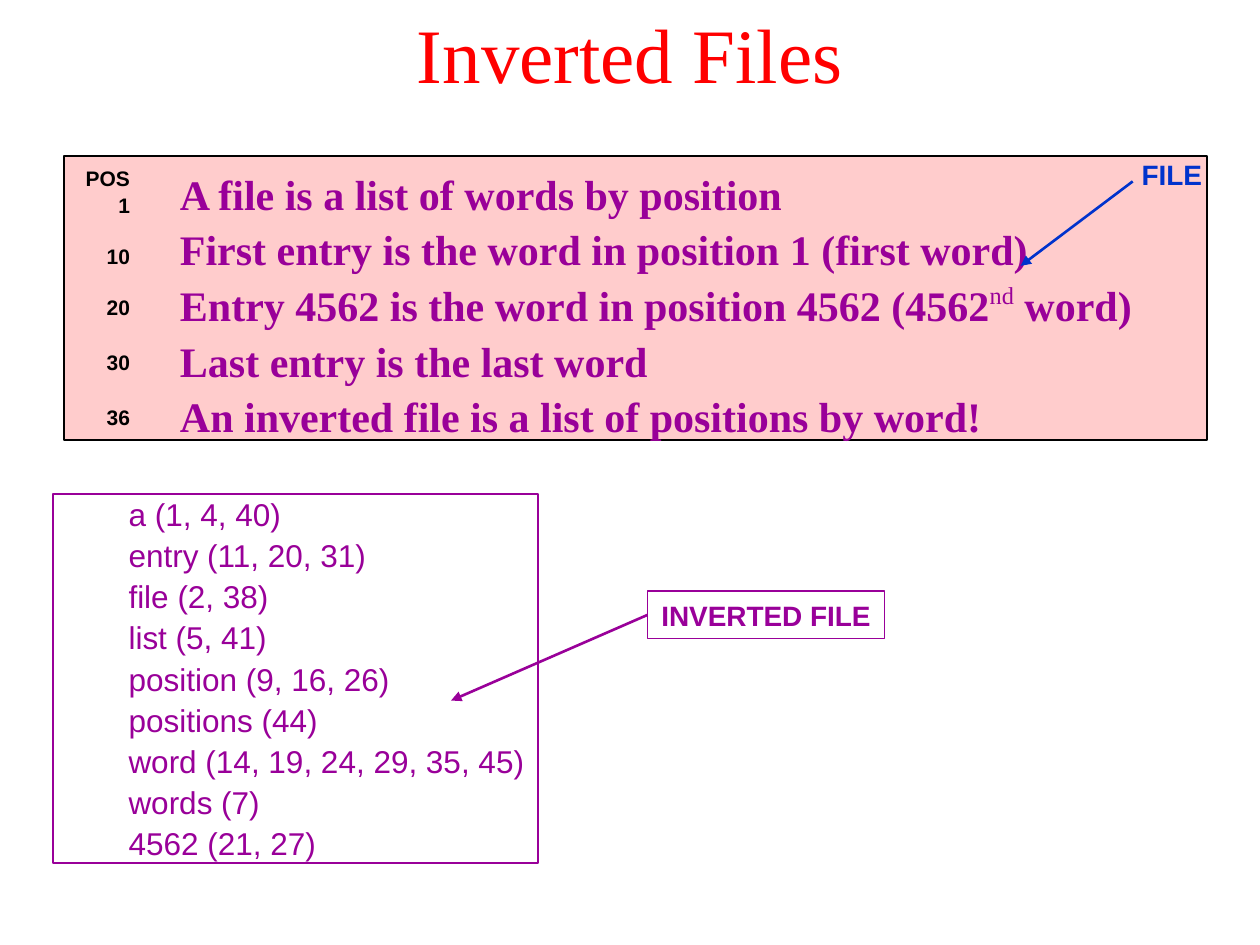
from dataclasses import dataclass

from lxml.etree import SubElement
from pptx import Presentation
from pptx.dml.color import RGBColor
from pptx.enum.shapes import MSO_CONNECTOR, MSO_SHAPE
from pptx.enum.text import MSO_ANCHOR, PP_ALIGN
from pptx.oxml.ns import qn
from pptx.util import Inches, Pt


@dataclass(frozen=True)
class Theme:
    serif: str = "Times New Roman"
    sans: str = "Arial"
    red: str = "FF0000"
    purple: str = "990099"
    blue: str = "0033CC"
    black: str = "000000"
    pink: str = "FFCCCC"
    title: int = 44
    body: int = 24
    entry: int = 18
    label: int = 16
    position: int = 12


@dataclass(frozen=True)
class Box:
    left: float
    top: float
    width: float
    height: float

    def inner(self, left, top, width, height):
        """Return a box offset from this box's corner, in inches."""
        return Box(self.left + left, self.top + top, width, height)

    def inches(self):
        return [Inches(v) for v in (self.left, self.top, self.width, self.height)]


THEME = Theme()
SENTENCES = [
    ["A file is a list of words by position"],
    ["First entry is the word in position 1 (first word)"],
    ["Entry 4562 is the word in position 4562 (4562", "nd", " word)"],
    ["Last entry is the last word"],
    ["An inverted file is a list of positions by word!"],
]
# Each position label with the space above it in points
POSITIONS = [("POS", 0), ("1", 1), ("10", 14.8), ("20", 14.8), ("30", 17), ("36", 17)]
ENTRIES = [
    "a (1, 4, 40)", "entry (11, 20, 31)", "file (2, 38)", "list (5, 41)",
    "position (9, 16, 26)", "positions (44)", "word (14, 19, 24, 29, 35, 45)",
    "words (7)", "4562 (21, 27)",
]


def add_rectangle(page, box, fill=None, line=THEME.black, width=1):
    shape = page.shapes.add_shape(MSO_SHAPE.RECTANGLE, *box.inches())
    shape.shadow.inherit = False
    if fill:
        shape.fill.solid()
        shape.fill.fore_color.rgb = RGBColor.from_string(fill)
    else:
        shape.fill.background()
    shape.line.color.rgb = RGBColor.from_string(line)
    shape.line.width = Pt(width)
    return shape


def add_text(shape, lines, *, font, size, color, bold=False, align=PP_ALIGN.LEFT,
             anchor=MSO_ANCHOR.MIDDLE, sides=(0.1, 0.1), before=0, spacing=1.0):
    """Write lines into a shape; a line is a string or a list of spans,
    of which every second one is a superscript."""
    frame = shape.text_frame
    frame.word_wrap = True
    frame.vertical_anchor = anchor
    frame.margin_left, frame.margin_right = (Inches(side) for side in sides)
    gaps = before if isinstance(before, list) else [before] * len(lines)
    for index, (line, gap) in enumerate(zip(lines, gaps)):
        para = frame.add_paragraph() if index else frame.paragraphs[0]
        para.alignment = align
        para.space_before = Pt(gap)
        para.line_spacing = spacing
        for number, text in enumerate([line] if isinstance(line, str) else line):
            raised = number % 2 == 1
            span = para.add_run()
            span.text = text
            span.font.name = font
            span.font.size = Pt(size)
            span.font.bold = bold and not raised
            span.font.color.rgb = RGBColor.from_string(color)
            if raised:
                span.font._element.set("baseline", "40000")


def add_text_box(page, box, lines, **style):
    add_text(page.shapes.add_textbox(*box.inches()), lines, **style)


def add_arrow(page, start, end, color):
    points = [Inches(value) for value in (*start, *end)]
    arrow = page.shapes.add_connector(MSO_CONNECTOR.STRAIGHT, *points)
    arrow.line.color.rgb = RGBColor.from_string(color)
    arrow.line.width = Pt(1.5)
    SubElement(arrow.line._get_or_add_ln(), qn("a:tailEnd"), type="triangle")
    SubElement(arrow._element.spPr, qn("a:effectLst"))
    return arrow


def add_title(page, box):
    add_text_box(page, box, ["Inverted Files"], font=THEME.serif, size=THEME.title,
                 color=THEME.red, align=PP_ALIGN.CENTER)


def add_file_panel(page, box):
    add_rectangle(page, box, fill=THEME.pink)
    # Sentences of the file
    add_text_box(page, box.inner(0.82, 0.09, 8.67, 2.12), SENTENCES, font=THEME.serif,
                 size=THEME.body, color=THEME.purple, bold=True,
                 anchor=MSO_ANCHOR.TOP, before=5.9, spacing=0.9)
    # Position of the first word in each line
    labels, gaps = zip(*POSITIONS)
    add_text_box(page, box.inner(0.07, 0.04, 0.55, 2.16), labels, font=THEME.sans,
                 size=THEME.position, color=THEME.black, bold=True,
                 align=PP_ALIGN.RIGHT, sides=(0, 0.1), before=list(gaps))
    # Label and its arrow
    add_text_box(page, box.inner(8.45, -0.04, 0.68, 0.37), ["FILE"], font=THEME.sans,
                 size=THEME.label, color=THEME.blue, bold=True,
                 align=PP_ALIGN.CENTER, sides=(0, 0))
    add_arrow(page, (box.left + 8.48, box.top + 0.2),
              (box.left + 7.59, box.top + 0.87), THEME.blue)


def add_inverted_panel(page, box):
    # Words with their positions
    entries = add_rectangle(page, box.inner(0, 0, 3.85, box.height), line=THEME.purple)
    add_text(entries, ENTRIES, font=THEME.sans, size=THEME.entry, color=THEME.purple,
             sides=(0.6, 0), before=1.87)
    # Label and its arrow
    label = add_rectangle(page, box.inner(4.72, 0.77, 1.88, 0.38),
                          line=THEME.purple, width=0.75)
    add_text(label, ["INVERTED FILE"], font=THEME.sans, size=THEME.label,
             color=THEME.purple, bold=True, align=PP_ALIGN.CENTER, sides=(0, 0))
    arrow = add_arrow(page, (box.left + 4.72, box.top + 0.96),
                      (box.left + 3.16, box.top + 1.64), THEME.purple)
    arrow.begin_connect(label, 1)


def main():
    deck = Presentation()
    deck.slide_width, deck.slide_height = Inches(10), Inches(7.5)
    page = deck.slides.add_slide(deck.slide_layouts[6])
    add_title(page, Box(0.75, 0, 8.5, 0.83))
    add_file_panel(page, Box(0.51, 1.24, 9.07, 2.25))
    add_inverted_panel(page, Box(0.42, 3.92, 6.6, 2.93))
    deck.save("out.pptx")


if __name__ == "__main__":
    main()
